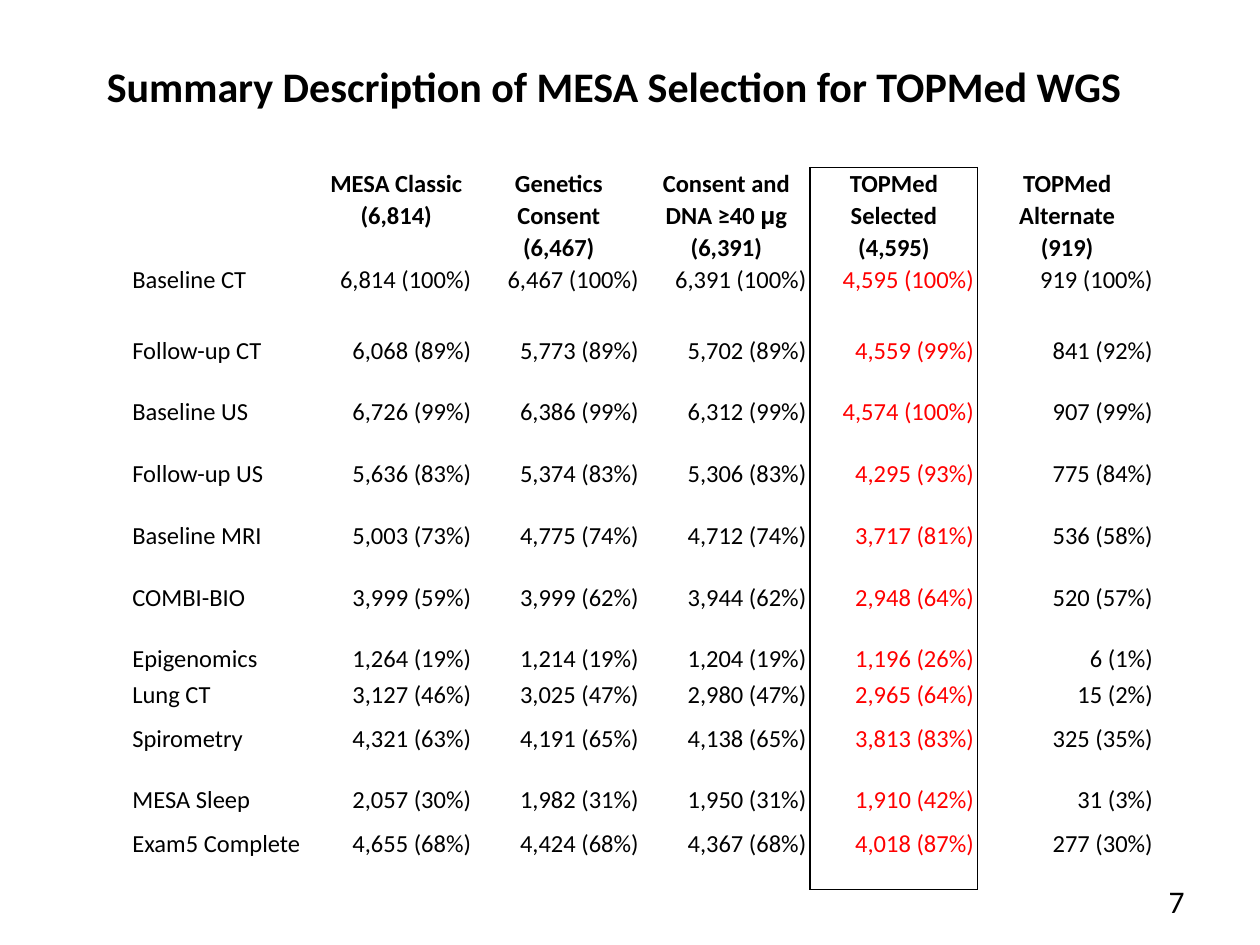
from lxml import etree
from pptx import Presentation
from pptx import util as u
from pptx.dml.color import RGBColor
from pptx.enum import text
from pptx.oxml.ns import qn

COLORS = {"ink": "000000", "selected": "FF0000"}
FONT = "Calibri"
TITLE = "Summary Description of MESA Selection for TOPMed WGS"
PAGE_NUMBER = "7"

HEADERS = [
    ([("MESA Classic", FONT)], "(6,814)"),
    ([("Genetics Consent", FONT)], "(6,467)"),
    ([("Consent and DNA ≥40 ", FONT), ("μ", "Arial"), ("g", FONT)], "(6,391)"),
    ([("TOPMed Selected", FONT)], "(4,595)"),
    ([("TOPMed Alternate", FONT)], "(919)"),
]
ROWS = [
    ("Baseline CT", "6,814 (100%)", "6,467 (100%)", "6,391 (100%)", "4,595 (100%)", "919 (100%)"),
    ("Follow-up CT", "6,068 (89%)", "5,773 (89%)", "5,702 (89%)", "4,559 (99%)", "841 (92%)"),
    ("Baseline US", "6,726 (99%)", "6,386 (99%)", "6,312 (99%)", "4,574 (100%)", "907 (99%)"),
    ("Follow-up US", "5,636 (83%)", "5,374 (83%)", "5,306 (83%)", "4,295 (93%)", "775 (84%)"),
    ("Baseline MRI", "5,003 (73%)", "4,775 (74%)", "4,712 (74%)", "3,717 (81%)", "536 (58%)"),
    ("COMBI-BIO", "3,999 (59%)", "3,999 (62%)", "3,944 (62%)", "2,948 (64%)", "520 (57%)"),
    ("Epigenomics", "1,264 (19%)", "1,214 (19%)", "1,204 (19%)", "1,196 (26%)", "6 (1%)"),
    ("Lung CT", "3,127 (46%)", "3,025 (47%)", "2,980 (47%)", "2,965 (64%)", "15 (2%)"),
    ("Spirometry", "4,321 (63%)", "4,191 (65%)", "4,138 (65%)", "3,813 (83%)", "325 (35%)"),
    ("MESA Sleep", "2,057 (30%)", "1,982 (31%)", "1,950 (31%)", "1,910 (42%)", "31 (3%)"),
    ("Exam5 Complete", "4,655 (68%)", "4,424 (68%)", "4,367 (68%)", "4,018 (87%)", "277 (30%)"),
]
COLUMN_WIDTHS = [1.5, 1.25, 1.33, 1.33, 1.33, 1.42]
ROW_HEIGHTS = [0.56, 0.56] + [0.49] * 5 + [0.28, 0.35, 0.49, 0.35, 0.49]
SELECTED = 4
PLAIN_TABLE_STYLE = "{2D5ABB26-0587-4C30-8999-92F81FD0307C}"


def add_run(paragraph, words, size, bold=False, color="ink", font=FONT):
    run = paragraph.add_run()
    run.text = words
    run.font.name = font
    run.font.size = u.Pt(size)
    run.font.bold = bold
    run.font.color.rgb = RGBColor.from_string(COLORS[color])


def add_text(slide, box, words, size, align, wrap, bold=False):
    frame = slide.shapes.add_textbox(*map(u.Inches, box)).text_frame
    frame.word_wrap = wrap
    frame.paragraphs[0].alignment = align
    add_run(frame.paragraphs[0], words, size, bold)


def fill_cell(cell, paragraphs, align, margin, bold=False, color="ink"):
    cell.margin_left = cell.margin_right = u.Inches(margin)
    cell.margin_top = cell.margin_bottom = 0
    for index, runs in enumerate(paragraphs):
        frame = cell.text_frame
        paragraph = frame.add_paragraph() if index else frame.paragraphs[0]
        paragraph.alignment = align
        paragraph.line_spacing = 1.07
        for words, font in runs:
            add_run(paragraph, words, 14, bold, color, font)


def set_borders(cell, sides):
    properties = cell._tc.get_or_add_tcPr()
    for index, side in enumerate(sides):
        line = etree.Element(qn(f"a:ln{side}"), w=str(u.Pt(1)))
        fill = etree.SubElement(line, qn("a:solidFill"))
        etree.SubElement(fill, qn("a:srgbClr"), val=COLORS["ink"])
        properties.insert(index, line)


def selected_sides(row, column):
    if column == SELECTED:
        top = "T" if row == 0 else ""
        bottom = "B" if row == len(ROWS) else ""
        return "LR" + top + bottom
    return {SELECTED - 1: "R", SELECTED + 1: "L"}.get(column, "")


def add_summary_table(slide):
    size = (sum(COLUMN_WIDTHS), sum(ROW_HEIGHTS))
    frame = slide.shapes.add_table(len(ROW_HEIGHTS), len(COLUMN_WIDTHS),
                                   *map(u.Inches, (1.02, 1.33) + size))
    table = frame.table
    table.first_row = table.horz_banding = False
    table._tbl.tblPr.find(qn("a:tableStyleId")).text = PLAIN_TABLE_STYLE
    for column, width in zip(table.columns, COLUMN_WIDTHS):
        column.width = u.Inches(width)
    for row, height in zip(table.rows, ROW_HEIGHTS):
        row.height = u.Inches(height)

    align = text.PP_ALIGN
    for column, (name, count) in enumerate(HEADERS, 1):
        fill_cell(table.cell(0, column), [name, [(count, FONT)]], align.CENTER, 0.02, bold=True)
    for row, values in enumerate(ROWS, 1):
        for column, value in enumerate(values):
            fill_cell(table.cell(row, column), [[(value, FONT)]],
                      align.RIGHT if column else align.LEFT, 0.03,
                      color="selected" if column == SELECTED else "ink")
    for row in range(len(ROW_HEIGHTS)):
        for column in range(len(COLUMN_WIDTHS)):
            cell = table.cell(row, column)
            cell.fill.background()
            set_borders(cell, selected_sides(row, column))


def main():
    presentation = Presentation()
    presentation.slide_width, presentation.slide_height = u.Inches(10), u.Inches(7.5)
    slide = presentation.slides.add_slide(presentation.slide_layouts[6])
    add_summary_table(slide)
    add_text(slide, (0.75, 0.43, 8.36, 0.5), TITLE, 24, text.PP_ALIGN.LEFT, False, bold=True)
    add_text(slide, (7.17, 6.95, 2.33, 0.4), PAGE_NUMBER, 18, text.PP_ALIGN.RIGHT, True)
    presentation.save("out.pptx")


if __name__ == "__main__":
    main()
